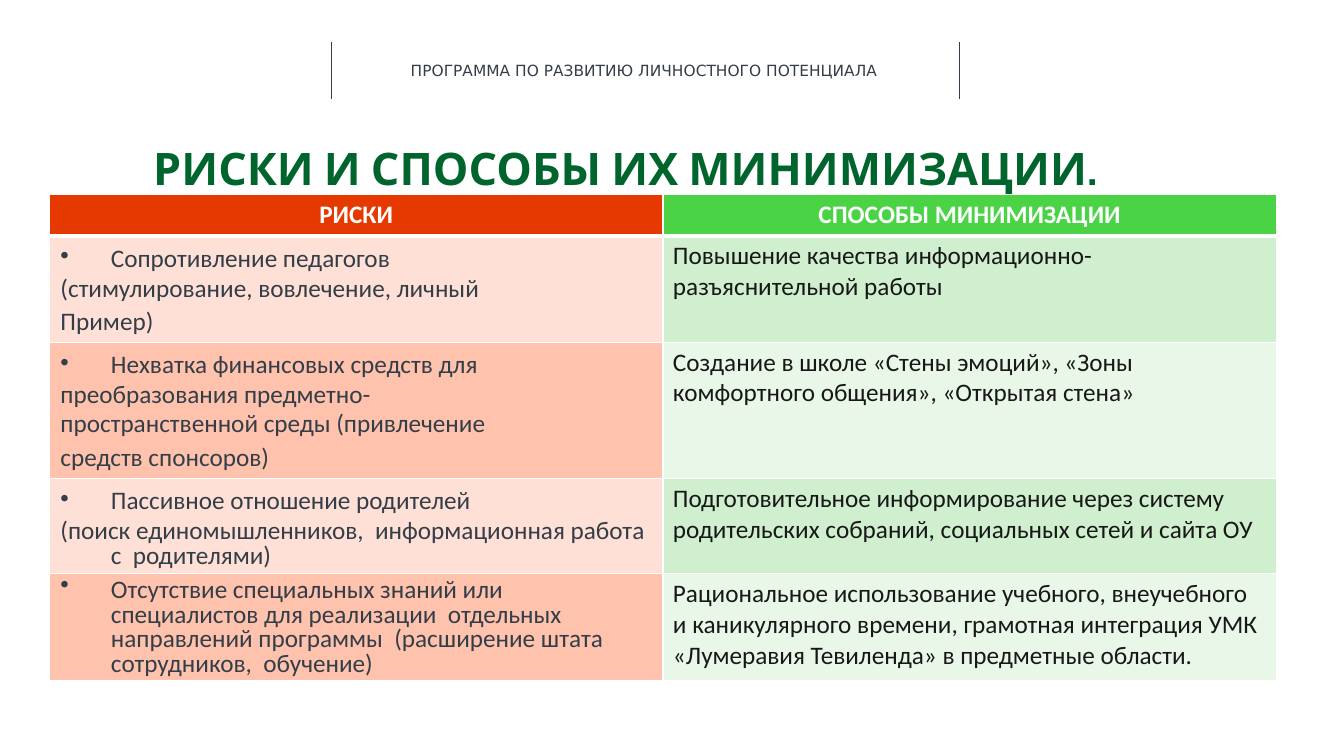
from dataclasses import dataclass

from lxml import etree
from pptx import Presentation
from pptx import util as u
from pptx.dml.color import RGBColor
from pptx.enum import shapes, text
from pptx.oxml import parse_xml
from pptx.oxml.ns import nsdecls, qn


@dataclass(frozen=True)
class Theme:
    ink: str = "333E48"
    dark: str = "181818"
    white: str = "FFFFFF"
    title: str = "00642D"
    heads: tuple = ("E53900", "49D345")
    bands: tuple = (("FFE0D6", "CFEFCF"), ("FFC2AD", "E9F7E9"))
    caption_font: str = "DejaVu Sans"
    title_font: str = "Cabin"
    body_font: str = "Calibri"
    caption_size: int = 11
    title_size: int = 32
    body_size: int = 18


T = Theme()
WIDTH, HEIGHT = 13.33, 7.5
WIDE, TIGHT, DENSE = u.Pt(23.8), u.Pt(21.1), 0.8  # line spacings

HEADS = ("РИСКИ", "СПОСОБЫ МИНИМИЗАЦИИ")
# Row height, lines of the risk with their spacing, way to reduce it
ROWS = (
    (1.05,
     (("Сопротивление педагогов", WIDE),
      ("(стимулирование, вовлечение, личный", TIGHT),
      ("Пример)", WIDE)),
     "Повышение качества информационно-разъяснительной работы"),
    (1.35,
     (("Нехватка финансовых средств для", WIDE),
      ("преобразования предметно-", TIGHT),
      ("пространственной среды (привлечение", TIGHT),
      ("средств спонсоров)", WIDE)),
     "Создание в школе «Стены эмоций», «Зоны комфортного общения», «Открытая стена»"),
    (0.94,
     (("Пассивное отношение родителей", WIDE),
      ("(поиск единомышленников,  информационная работа с  родителями)", DENSE)),
     "Подготовительное информирование через систему родительских собраний, "
     "социальных сетей и сайта ОУ"),
    (1.06,
     (("Отсутствие специальных знаний или  специалистов для реализации  отдельных "
       "направлений программы  (расширение штата сотрудников,  обучение)", DENSE),),
     "Рациональное использование учебного, внеучебного и каникулярного времени, "
     "грамотная интеграция УМК «Лумеравия Тевиленда» в предметные области."),
)


def inches(*lengths):
    return [u.Inches(n) for n in lengths]


def add_run(p, words, font, size, color, bold=False):
    r = p.add_run()
    r.text = words
    r.font.name, r.font.size, r.font.bold = font, u.Pt(size), bold
    r.font.color.rgb = RGBColor.from_string(color)


def add_text(s, box, words, font, size, color, bold=False, align=None, inset=(0, 0)):
    tf = s.shapes.add_textbox(*inches(*box)).text_frame
    tf.word_wrap = True
    tf.vertical_anchor = text.MSO_ANCHOR.MIDDLE
    tf.margin_left = tf.margin_right = u.Inches(inset[0])
    tf.margin_top = tf.margin_bottom = u.Inches(inset[1])
    p = tf.paragraphs[0]
    p.alignment = align
    add_run(p, words, font, size, color, bold)


def style_cell(cell, fill, top=1, bottom=1):
    tcPr = cell._tc.get_or_add_tcPr()
    for side, points in (("L", 1), ("R", 1), ("T", top), ("B", bottom)):
        tcPr.append(parse_xml(
            f'<a:ln{side} {nsdecls("a")} w="{u.Pt(points)}"><a:solidFill>'
            f'<a:srgbClr val="{T.white}"/></a:solidFill></a:ln{side}>'))
    cell.fill.solid()
    cell.fill.fore_color.rgb = RGBColor.from_string(fill)


def fill_risk(cell, lines):
    tf = cell.text_frame
    for i, (words, spacing) in enumerate(lines):
        p = tf.add_paragraph() if i else tf.paragraphs[0]
        pPr = p._p.get_or_add_pPr()
        pPr.set("marL", str(u.Inches(0.51)))
        pPr.set("indent", str(u.Inches(-0.5)))
        if i == 0:
            etree.SubElement(pPr, qn("a:buChar")).set("char", "•")
        else:
            etree.SubElement(pPr, qn("a:buNone"))
        p.line_spacing = spacing
        if i and spacing == DENSE:
            p.space_before = u.Pt(2.6)
        add_run(p, words, T.body_font, T.body_size, T.ink)


def add_banner(s, x, y, w, h):
    # Rules on both sides
    for rule_x in (x, x + w):
        line = s.shapes.add_connector(
            shapes.MSO_CONNECTOR.STRAIGHT, *inches(rule_x, y, rule_x, y + h))
        line.line.width = u.Pt(0.5)
        line.line.color.rgb = RGBColor.from_string(T.ink)
        etree.SubElement(line._element.spPr, qn("a:effectLst"))
    # Programme name
    add_text(s, (x + 0.11 * w, y + h / 4, 0.78 * w, h / 2),
             "ПРОГРАММА ПО РАЗВИТИЮ ЛИЧНОСТНОГО ПОТЕНЦИАЛА",
             T.caption_font, T.caption_size, T.ink, inset=(0.1, 0.05))


def add_title(s, x, y, w, h):
    add_text(s, (x, y, w, h), "РИСКИ И СПОСОБЫ ИХ МИНИМИЗАЦИИ.", T.title_font,
             T.title_size, T.title, True, text.PP_ALIGN.CENTER)


def add_risk_table(s, x, y, w, head_h):
    heights = [head_h] + [row[0] for row in ROWS]
    table = s.shapes.add_table(
        len(heights), 2, *inches(x, y, w, sum(heights))).table
    for row, height in zip(table.rows, heights):
        row.height = u.Inches(height)
    for column in table.columns:
        column.width = u.Inches(w / 2)
    # Heading row
    for i, (words, fill) in enumerate(zip(HEADS, T.heads)):
        cell = table.cell(0, i)
        style_cell(cell, fill, bottom=3)
        p = cell.text_frame.paragraphs[0]
        p.alignment = text.PP_ALIGN.CENTER
        add_run(p, words, T.body_font, T.body_size, T.white, True)
    # Risks and the ways to reduce them
    for n, (_, risk, remedy) in enumerate(ROWS, 1):
        for i, fill in enumerate(T.bands[(n - 1) % 2]):
            style_cell(table.cell(n, i), fill, top=3 if n == 1 else 1)
        fill_risk(table.cell(n, 0), risk)
        add_run(table.cell(n, 1).text_frame.paragraphs[0], remedy,
                T.body_font, T.body_size, T.dark)


def main():
    prs = Presentation()
    prs.slide_width, prs.slide_height = inches(WIDTH, HEIGHT)
    s = prs.slides.add_slide(prs.slide_layouts[6])
    add_banner(s, 3.29, 0.42, 6.23, 0.56)
    add_title(s, 0, 1.39, 12.41, 0.54)
    add_risk_table(s, 0.49, 1.93, 12.17, 0.41)
    prs.save("out.pptx")


if __name__ == "__main__":
    main()
